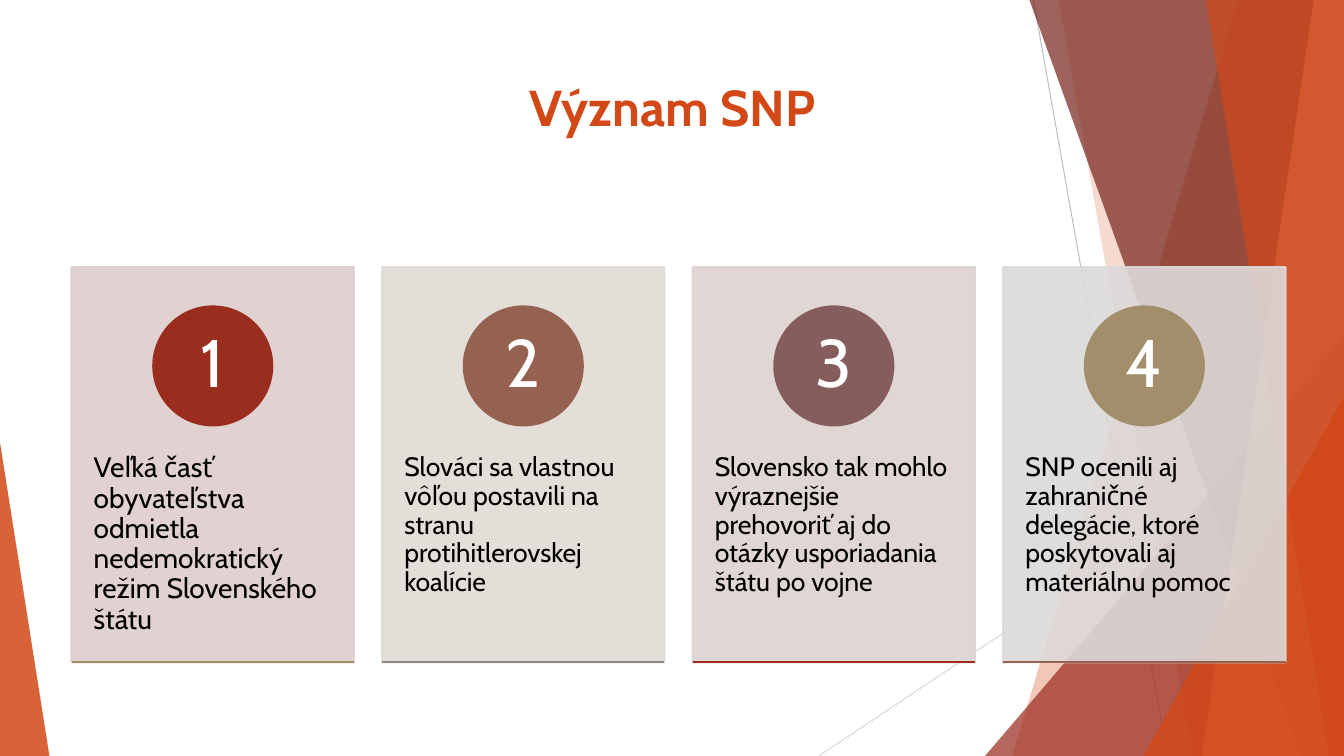
from lxml.etree import SubElement
from pptx import Presentation
from pptx.dml.color import RGBColor
from pptx.enum.shapes import MSO_CONNECTOR as CONN, MSO_SHAPE as SHAPE
from pptx.enum.text import MSO_ANCHOR as ANCHOR, PP_ALIGN as ALIGN
from pptx.oxml.ns import qn
from pptx.util import Pt

PX = 9144  # EMU per px, 100 px to the inch
FONT = "Cabin"

ORANGE = RGBColor(0xD3, 0x48, 0x17)
PEACH = RGBColor(0xEF, 0x8C, 0x6A)
RED = RGBColor(0x9B, 0x2D, 0x1F)
MAROON = RGBColor(0x74, 0x22, 0x17)
BROWN = RGBColor(0x95, 0x62, 0x51)
MAUVE = RGBColor(0x85, 0x5D, 0x5D)
SAND = RGBColor(0xA2, 0x8E, 0x6A)
TAUPE = RGBColor(0x91, 0x84, 0x85)
PINK_TINT = RGBColor(0xDE, 0xCD, 0xCD)
SAND_TINT = RGBColor(0xE0, 0xDB, 0xD4)
ROSE_TINT = RGBColor(0xDD, 0xD3, 0xD0)
GREY_TINT = RGBColor(0xDC, 0xD9, 0xD9)
GREY = RGBColor(0xBF, 0xBF, 0xBF)
LIGHT_GREY = RGBColor(0xD9, 0xD9, 0xD9)
BLACK = RGBColor(0, 0, 0)
WHITE = RGBColor(0xFF, 0xFF, 0xFF)

WIDTH, HEIGHT = 1333, 750
CARD_LEFT, CARD_TOP, CARD_W, CARD_H, CARD_PITCH = 71, 265, 280, 392, 308
CIRCLE = 118

# Points and opacity of the slanted bands
BANDS = [
    ([(1228, 0), (WIDTH, 0), (WIDTH, HEIGHT), (1004, HEIGHT)], ORANGE, 30),
    ([(1050, 0), (WIDTH, 0), (WIDTH, HEIGHT), (1183, HEIGHT)], ORANGE, 20),
    ([(WIDTH, 333), (WIDTH, HEIGHT), (977, HEIGHT)], RED, 72),
    ([(1021, 0), (WIDTH, 0), (WIDTH, HEIGHT), (1291, HEIGHT)], MAROON, 70),
    ([(1303, 0), (WIDTH, 0), (WIDTH, HEIGHT), (1192, HEIGHT)], PEACH, 70),
    ([(1196, 0), (WIDTH, 0), (WIDTH, HEIGHT), (1318, HEIGHT)], ORANGE, 65),
    ([(WIDTH, 393), (WIDTH, HEIGHT), (1134, HEIGHT)], ORANGE, 80),
    ([(0, 439), (49, HEIGHT), (0, HEIGHT)], ORANGE, 85),
]

# Text, size, card tint, circle colour, bottom line colour
CARDS = [
    ("Veľká časť obyvateľstva odmietla nedemokratický režim Slovenského štátu",
     20, PINK_TINT, RED, SAND),
    ("Slováci sa vlastnou vôľou postavili na stranu protihitlerovskej koalície",
     19, SAND_TINT, BROWN, TAUPE),
    ("Slovensko tak mohlo výraznejšie prehovoriť aj do otázky usporiadania štátu po vojne",
     19, ROSE_TINT, MAUVE, RED),
    ("SNP ocenili aj zahraničné delegácie, ktoré poskytovali aj materiálnu pomoc",
     19, GREY_TINT, SAND, BROWN),
]


def px(*lengths):
    return [n * PX for n in lengths]


def paint(sp, color, opacity=100, outline=None):
    """Fill a shape and give it an outline of the same colour, or none."""
    sp.shadow.inherit = False
    sp.fill.solid()
    sp.fill.fore_color.rgb = color
    if outline:
        sp.line.color.rgb = color
        sp.line.width = Pt(outline)
    else:
        sp.line.fill.background()
    if opacity < 100:
        for clr in sp._element.spPr.iter(qn("a:srgbClr")):
            SubElement(clr, qn("a:alpha"), val=str(opacity * 1000))


def write(sp, text, size, color, bold=False, align=ALIGN.LEFT,
          anchor=ANCHOR.TOP, margins=(0, 0), spacing=None):
    tf = sp.text_frame
    tf.word_wrap = True
    tf.vertical_anchor = anchor
    tf.margin_left = tf.margin_right = margins[0] * PX
    tf.margin_top = tf.margin_bottom = margins[1] * PX
    p = tf.paragraphs[0]
    p.alignment = align
    p.line_spacing = spacing
    r = p.add_run()
    r.text = text
    r.font.name, r.font.size, r.font.bold = FONT, Pt(size), bold
    r.font.color.rgb = color


def add_line(slide, start, end, color, width):
    line = slide.shapes.add_connector(CONN.STRAIGHT, *px(*start, *end))
    line.line.color.rgb = color
    line.line.width = Pt(width)
    SubElement(line._element.spPr, qn("a:effectLst"))


def add_band(slide, points, color, opacity):
    builder = slide.shapes.build_freeform(*points[0], scale=PX)
    builder.add_line_segments(points[1:], close=True)
    paint(builder.convert_to_shape(), color, opacity)


def add_card(slide, number, text, size, tint, accent, base):
    left = CARD_LEFT + (number - 1) * CARD_PITCH
    bottom = CARD_TOP + CARD_H
    card = slide.shapes.add_shape(
        SHAPE.RECTANGLE, *px(left, CARD_TOP, CARD_W, CARD_H))
    paint(card, tint, opacity=90, outline=1.5)

    body = slide.shapes.add_textbox(*px(left, 414, CARD_W, 235))
    write(body, text, size, BLACK, margins=(22, 36), spacing=0.9)

    circle = slide.shapes.add_shape(
        SHAPE.OVAL, *px(left + (CARD_W - CIRCLE) // 2, 304, CIRCLE, CIRCLE))
    paint(circle, accent, outline=1.5)
    write(circle, str(number), 48, WHITE, align=ALIGN.CENTER,
          anchor=ANCHOR.MIDDLE, spacing=0.9)

    add_line(slide, (left, bottom), (left + CARD_W, bottom), base, 1.5)


def main():
    prs = Presentation()
    prs.slide_width, prs.slide_height = px(WIDTH, HEIGHT)
    slide = prs.slides.add_slide(prs.slide_layouts[5])

    # Title
    title = slide.shapes.title
    title.left, title.top, title.width, title.height = px(117, 70, 1100, 150)
    write(title, "Význam SNP", 36, ORANGE, bold=True, align=ALIGN.CENTER,
          margins=(10, 5))

    # Background lines and bands
    add_line(slide, (1025, 0), (1158, HEIGHT), GREY, 0.75)
    add_line(slide, (WIDTH, 403), (812, HEIGHT), LIGHT_GREY, 0.75)
    for band in BANDS:
        add_band(slide, *band)

    # Numbered cards
    for number, card in enumerate(CARDS, start=1):
        add_card(slide, number, *card)

    prs.save("out.pptx")


if __name__ == "__main__":
    main()
